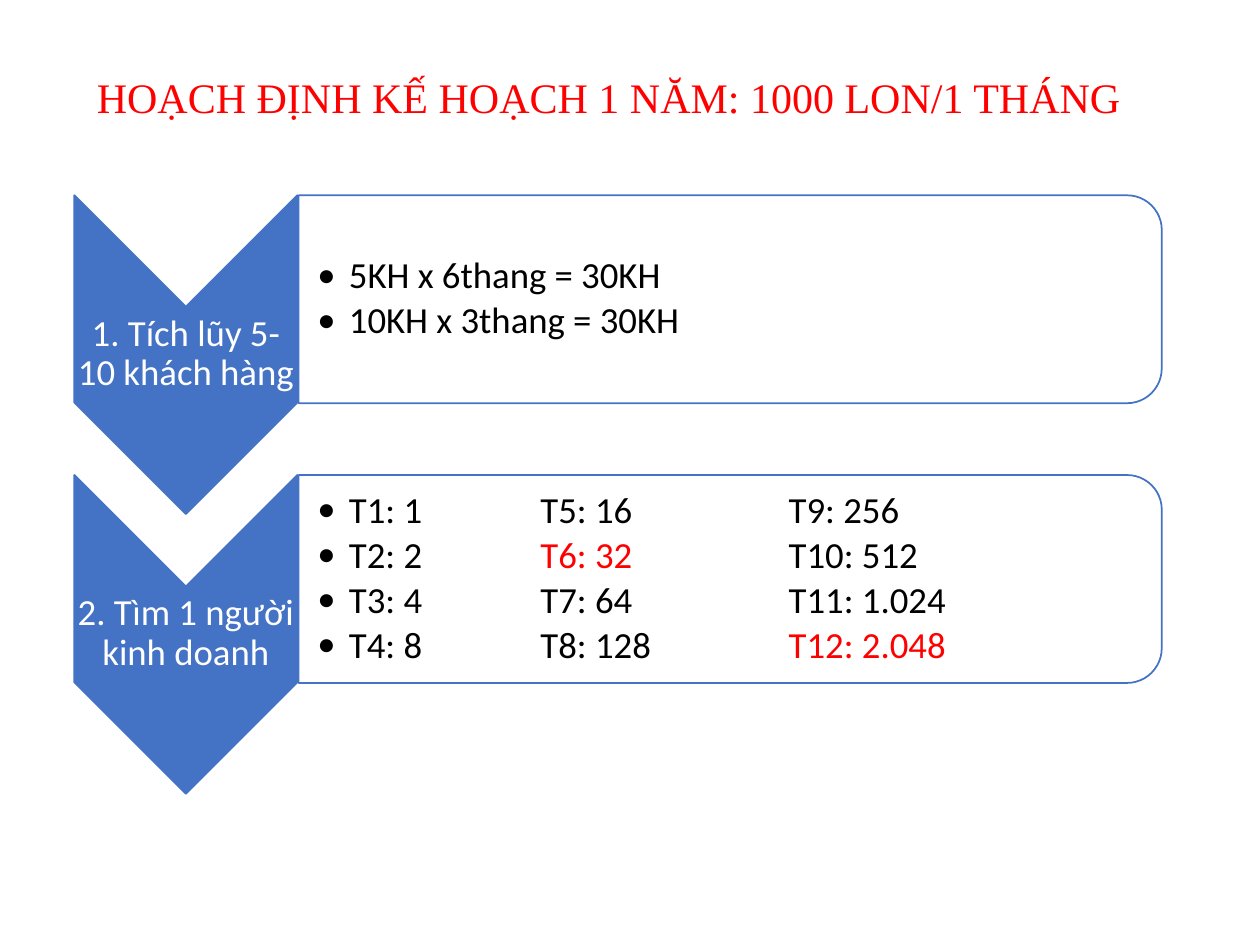
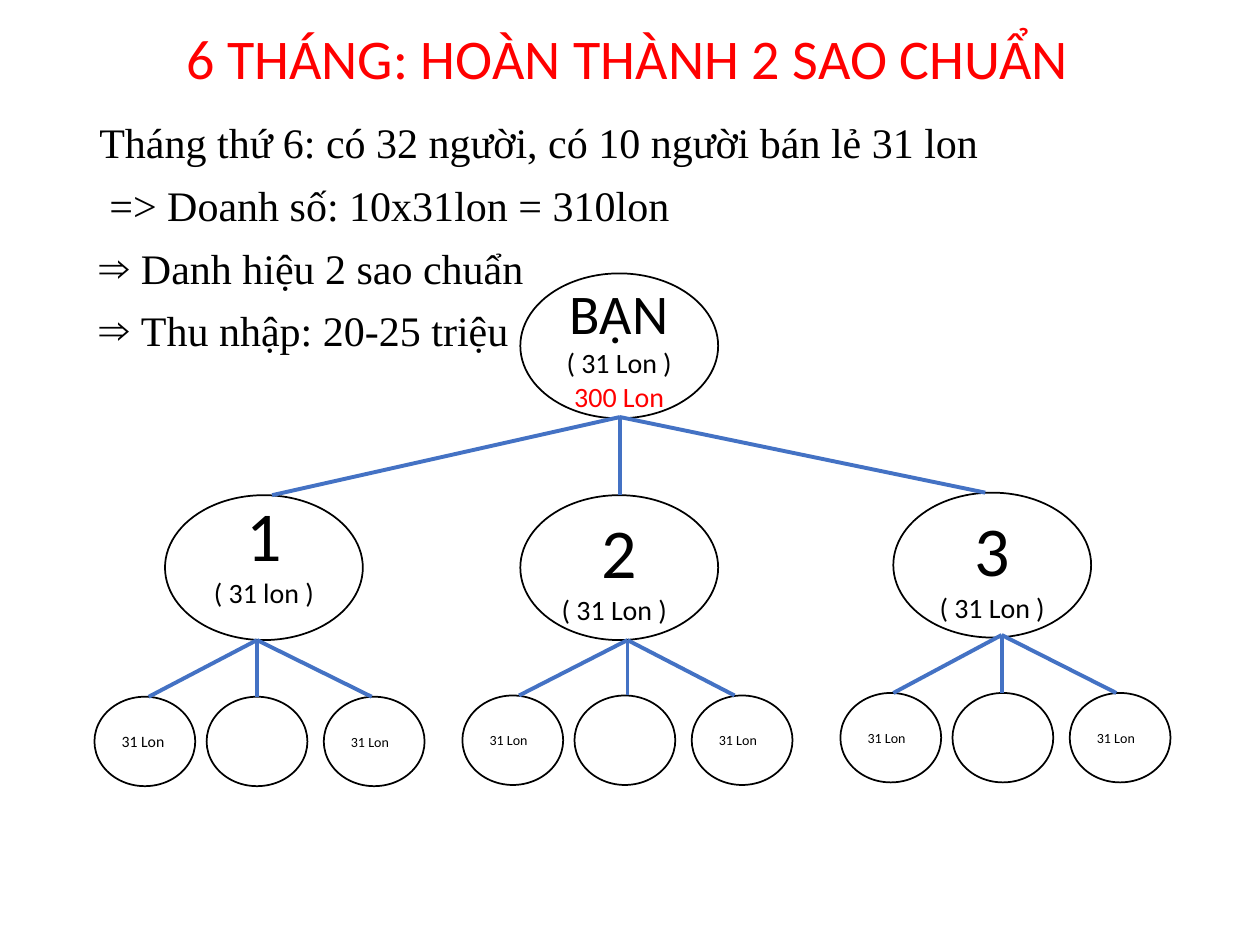
from lxml import etree
from pptx import Presentation
from pptx import util as u
from pptx.dml.color import RGBColor
from pptx.enum import shapes, text
from pptx.oxml import ns

BLUE = RGBColor(0x44, 0x72, 0xC4)
RED = RGBColor(0xFF, 0, 0)
BLACK = RGBColor(0, 0, 0)
WHITE = RGBColor(0xFF, 0xFF, 0xFF)
SANS = "Calibri"
SERIF = "Times New Roman"
CENTER = text.PP_ALIGN.CENTER
LEFT = text.PP_ALIGN.LEFT
MIDDLE = text.MSO_ANCHOR.MIDDLE
TOP = text.MSO_ANCHOR.TOP
TEXT_INSETS = (0.1, 0.05, 0.1, 0.05)

NODE_SIZE = (1.57, 1.15)
LEAF_SIZE = (0.8, 0.71)
LEAF_OFFSETS = (0, 0.89, 1.82)


def add_run(p, words, size, color=BLACK, font=SANS):
    r = p.add_run()
    r.text = words
    r.font.size = u.Pt(size)
    r.font.name = font
    r.font.color.rgb = color


def setup_frame(sp, anchor=MIDDLE, insets=TEXT_INSETS):
    tf = sp.text_frame
    tf.word_wrap = True
    tf.vertical_anchor = anchor
    tf.margin_left, tf.margin_top, tf.margin_right, tf.margin_bottom = map(u.Inches, insets)
    return tf


def add_textbox(s, box, anchor=MIDDLE, insets=TEXT_INSETS):
    return setup_frame(s.shapes.add_textbox(*map(u.Inches, box)), anchor, insets)


def next_paragraph(tf, align=LEFT, spacing=None):
    first = not tf.paragraphs[0].runs
    p = tf.paragraphs[0] if first else tf.add_paragraph()
    p.alignment = align
    if spacing:
        p.line_spacing = spacing
    return p, first


def set_bullet(p, char, indent, font, tabs=()):
    pPr = p._p.get_or_add_pPr()
    pPr.set("marL", str(u.Inches(indent)))
    pPr.set("indent", str(-u.Inches(indent)))
    etree.SubElement(pPr, ns.qn("a:buFont"), typeface=font)
    etree.SubElement(pPr, ns.qn("a:buChar"), char=char)
    if tabs:
        tab_list = etree.SubElement(pPr, ns.qn("a:tabLst"))
        for pos in tabs:
            etree.SubElement(tab_list, ns.qn("a:tab"), pos=str(u.Inches(pos)), algn="l")


def add_title(s, box, words, size, font=SANS, align=LEFT):
    p, _ = next_paragraph(add_textbox(s, box), align, 0.9)
    add_run(p, words, size, RED, font)


def add_preset(s, kind, box, fill, line):
    sp = s.shapes.add_shape(kind, *map(u.Inches, box))
    sp.shadow.inherit = False
    sp.fill.solid()
    sp.fill.fore_color.rgb = fill
    sp.line.color.rgb = line
    sp.line.width = u.Pt(1)
    return sp


def add_turned(s, kind, box, fill):
    x, y, w, h = box
    turned = (x + (w - h) / 2, y + (h - w) / 2, h, w)
    add_preset(s, kind, turned, fill, BLUE).rotation = 90


def add_step(s, top, label, rows):
    add_turned(s, shapes.MSO_SHAPE.CHEVRON, (0.59, top, 1.77, 2.53), BLUE)
    tf = add_textbox(s, (0.59, top + 0.88, 1.77, 0.76), insets=(0.01,) * 4)
    p, _ = next_paragraph(tf, CENTER, 0.9)
    add_run(p, label, 21, WHITE)

    add_turned(s, shapes.MSO_SHAPE.ROUND_2_SAME_RECTANGLE, (2.37, top, 6.85, 1.65), WHITE)
    tf = add_textbox(s, (2.36, top + 0.08, 6.77, 1.49), insets=(0.16, 0.01, 0.01, 0.01))
    for cells in rows:
        p, _ = next_paragraph(tf, spacing=0.9)
        set_bullet(p, "•", 0.25, SANS, (1.77, 3.74) if len(cells) > 1 else ())
        p.space_after = u.Pt(3)
        for i, cell in enumerate(cells):
            color = RED if cell in ("T6: 32", "T12: 2.048") else BLACK
            add_run(p, ("\t" if i else "") + cell, 21, color)


def add_ellipse(s, at, size, lines, insets=TEXT_INSETS):
    sp = add_preset(s, shapes.MSO_SHAPE.OVAL, at + size, WHITE, BLACK)
    tf = setup_frame(sp, insets=insets)
    for words, points, color, align in lines:
        p, _ = next_paragraph(tf, align)
        add_run(p, words, points, color)


def add_link(s, start, end):
    cn = s.shapes.add_connector(shapes.MSO_CONNECTOR.STRAIGHT, *map(u.Inches, start + end))
    cn.line.color.rgb = BLUE
    cn.line.width = u.Pt(2.25)
    etree.SubElement(cn._element.spPr, ns.qn("a:effectLst"))


def add_branch(s, at, number, lon, lon_align, insets, leaf_at, leaf_sizes, apex, reach):
    add_ellipse(s, at, NODE_SIZE, [(number, 40, BLACK, CENTER), (lon, 16, BLACK, lon_align)], insets)
    x, y = leaf_at
    for offset, size in zip(LEAF_OFFSETS, leaf_sizes):
        lines = [("31 Lon", size, BLACK, LEFT)] if size else []
        add_ellipse(s, (x + offset, y), LEAF_SIZE, lines)
    for dx in (-0.86, 0, reach):
        add_link(s, apex, (apex[0] + dx, y))


def build_plan(s):
    add_title(s, (0.67, 0.36, 8.5, 0.87), "HOẠCH ĐỊNH KẾ HOẠCH 1 NĂM: 1000 LON/1 THÁNG", 24, SERIF)
    add_step(s, 1.55, "1. Tích lũy 5-10 khách hàng", [["5KH x 6thang = 30KH"], ["10KH x 3thang = 30KH"]])
    add_step(s, 3.77, "2. Tìm 1 người kinh doanh", [
        ["T1: 1", "T5: 16", "T9: 256"],
        ["T2: 2", "T6: 32", "T10: 512"],
        ["T3: 4", "T7: 64", "T11: 1.024"],
        ["T4: 8", "T8: 128", "T12: 2.048"],
    ])


def build_tree(s):
    add_title(s, (0.67, 0.13, 8.62, 0.71), "6 THÁNG: HOÀN THÀNH 2 SAO CHUẨN", 32, align=CENTER)
    tf = add_textbox(s, (0.69, 0.92, 8.62, 5.84), TOP)
    for words, bullet, indent in [
        ("Tháng thứ 6: có 32 người, có 10 người bán lẻ 31 lon", None, 0),
        ("=> Doanh số: 10x31lon = 310lon", None, 0.08),
        ("Danh hiệu 2 sao chuẩn", "⇒", 0.33),
        ("Thu nhập: 20-25 triệu", "⇒", 0.33),
    ]:
        p, first = next_paragraph(tf, spacing=0.9)
        if bullet:
            set_bullet(p, bullet, indent, SERIF)
        elif indent:
            p._p.get_or_add_pPr().set("marL", str(u.Inches(indent)))
        if not first:
            p.space_before = u.Pt(10)
        add_run(p, words, 24, font=SERIF)

    add_ellipse(s, (4.13, 2.17), NODE_SIZE, [
        ("BẠN", 32, BLACK, CENTER),
        ("( 31 Lon )", 16, BLACK, CENTER),
        ("300 Lon", 16, RED, CENTER),
    ])
    raised = (0.1, 0.05, 0.1, 0.32)
    add_branch(s, (1.31, 3.93), "1", "( 31 lon )", CENTER, raised,
               (0.75, 5.53), (9, None, 8), (2.04, 5.08), 0.91)
    add_branch(s, (4.13, 3.93), "2", "( 31 Lon )", LEFT, TEXT_INSETS,
               (3.67, 5.52), (8, None, 8), (4.98, 5.08), 0.85)
    add_branch(s, (7.09, 3.91), "3", "( 31 Lon )", CENTER, TEXT_INSETS,
               (6.67, 5.5), (8, None, 8), (7.95, 5.04), 0.91)
    for end in [(2.16, 3.93), (4.92, 3.93), (7.82, 3.91)]:
        add_link(s, (4.92, 3.31), end)


def main():
    prs = Presentation()
    prs.slide_width, prs.slide_height = u.Inches(10), u.Inches(7.5)
    for build in (build_plan, build_tree):
        build(prs.slides.add_slide(prs.slide_layouts[6]))
    prs.save("out.pptx")


if __name__ == "__main__":
    main()
